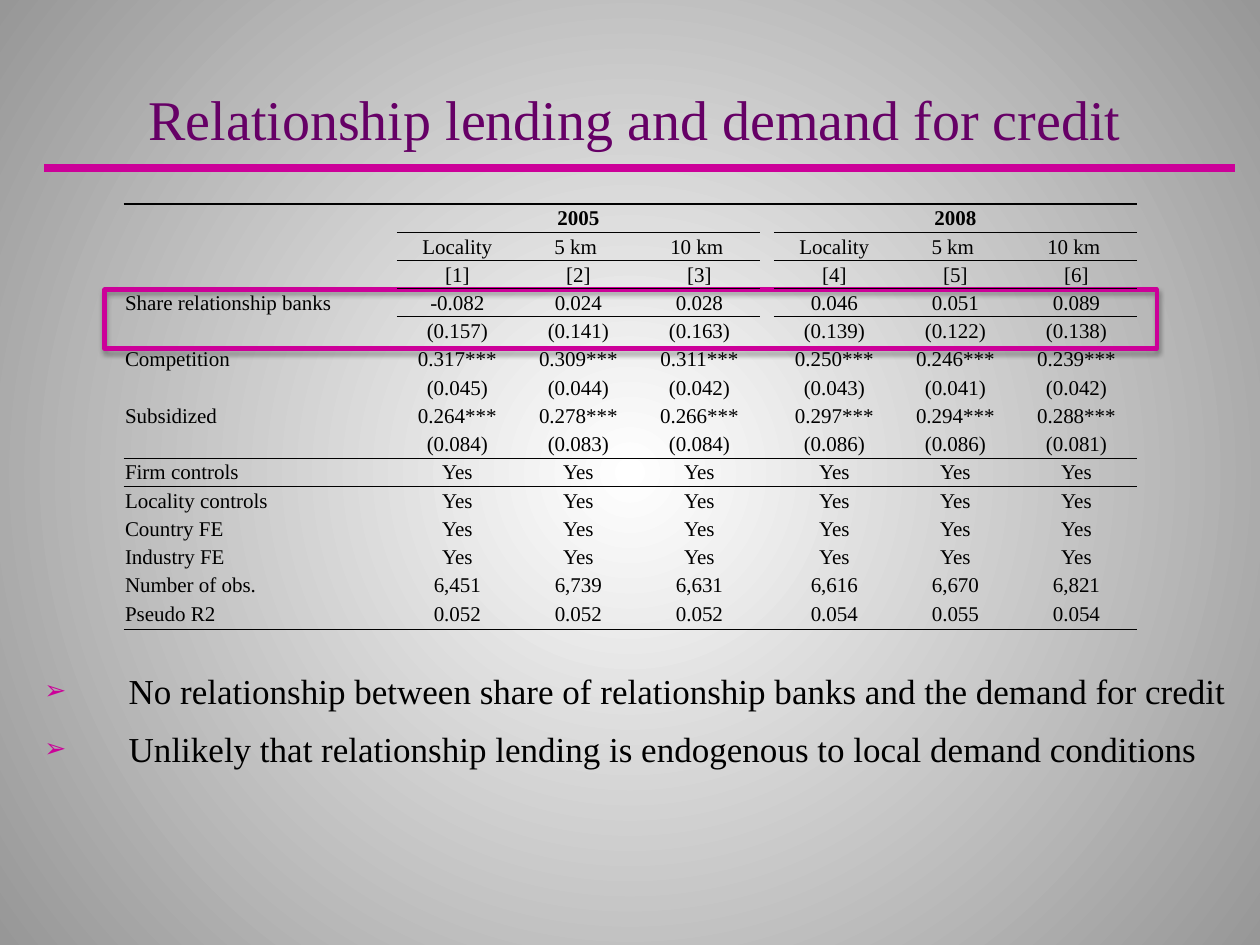
"""Build a slide with a table of lending results and two remarks."""
from typing import Any, NamedTuple

from pptx import Presentation
from pptx.dml.color import RGBColor
from pptx.enum.shapes import MSO_CONNECTOR, MSO_SHAPE
from pptx.enum.text import MSO_ANCHOR, MSO_AUTO_SIZE, PP_ALIGN
from pptx.oxml import parse_xml
from pptx.oxml.ns import nsdecls
from pptx.util import Cm, Pt

HUES = {"title": "660066", "accent": "CC0099", "text": "000000",
        "inner": "FFFFFF", "outer": "979797"}
FACE = "Times New Roman"
NS = nsdecls("a")


class Box(NamedTuple):
    left: float
    top: float
    width: float
    height: float


class Rule(NamedTuple):
    edge: int
    points: float
    cols: tuple


NAMES = Box(0.84, 0.64, 23.93, 2.54)
BODY = Box(0.64, 3.61, 24.46, 15.44)
FRAME = Box(2.11, 5.84, 21.21, 1.19)
GRID = Box(2.49, 4.11, 20.43, 8.59)

WIDTHS = [5.51] + [2.44] * 3 + [0.28] + [2.44] * 3
HEIGHTS = [0.57] * 14 + [0.61]
WHOLE = tuple(range(8))
DATA = (1, 2, 3, 5, 6, 7)
RULES = [Rule(0, 1, WHOLE), Rule(1, 0.5, DATA), Rule(2, 0.5, DATA),
         Rule(3, 0.5, DATA), Rule(9, 0.5, WHOLE), Rule(15, 1, WHOLE)]

YES = ["Yes"] * 6
ROWS = [
    ("", ["2005", "", "", "2008", "", ""]),
    ("", ["Locality", "5 km ", "10 km "] * 2),
    ("", [f"[{n}]" for n in range(1, 7)]),
    ("Share relationship banks", ["-0.082", "0.024", "0.028", "0.046", "0.051", "0.089"]),
    ("", ["(0.157)", "(0.141)", "(0.163)", "(0.139)", "(0.122)", "(0.138)"]),
    ("Competition", ["0.317***", "0.309***", "0.311***", "0.250***", "0.246***", "0.239***"]),
    ("", ["(0.045)", "(0.044)", "(0.042)", "(0.043)", "(0.041)", "(0.042)"]),
    ("Subsidized", ["0.264***", "0.278***", "0.266***", "0.297***", "0.294***", "0.288***"]),
    ("", ["(0.084)", "(0.083)", "(0.084)", "(0.086)", "(0.086)", "(0.081)"]),
    ("Firm controls", YES),
    ("Locality controls", YES),
    ("Country FE", YES),
    ("Industry FE", YES),
    ("Number of obs.", ["6,451", "6,739", "6,631", "6,616", "6,670", "6,821"]),
    ("Pseudo R2", ["0.052", "0.052", "0.052", "0.054", "0.055", "0.054"]),
]
POINTS = [
    "No relationship between share of relationship banks and the demand for credit",
    "Unlikely that relationship lending is endogenous to local demand conditions",
]


def style(item: Any, values: dict) -> None:
    """Set each named value on the item."""
    for name, value in values.items():
        setattr(item, name, value)


def place(shape: Any, box: Box) -> None:
    """Move a shape to its box."""
    style(shape, {name: Cm(value) for name, value in box._asdict().items()})


def write(para: Any, text: str, size: int, hue: str, bold: bool = False) -> None:
    """Add one styled run to a paragraph."""
    run = para.add_run()
    run.text = text
    style(run.font, {"name": FACE, "size": Pt(size), "bold": bold})
    run.font.color.rgb = RGBColor.from_string(HUES[hue])


def shade(slide: Any) -> None:
    """Give the slide a round grey gradient."""
    fill = slide.background.fill
    fill.gradient()
    for stop, place_at, hue in zip(fill.gradient_stops, (0, 1), ("inner", "outer")):
        stop.position = place_at
        stop.color.rgb = RGBColor.from_string(HUES[hue])
    grad = slide.element.xpath("//p:bg//a:gradFill")[0]
    for line in grad.xpath("a:lin"):
        grad.remove(line)
    grad.append(parse_xml(
        f'<a:path {NS} path="circle"><a:fillToRect l="50000" t="50000" '
        'r="50000" b="50000"/></a:path>'))


def head(slide: Any) -> None:
    """Fill the title and draw the bar below it."""
    title = slide.shapes.title
    place(title, NAMES)
    style(title.text_frame, {"vertical_anchor": MSO_ANCHOR.BOTTOM,
                             "auto_size": MSO_AUTO_SIZE.NONE})
    para = title.text_frame.paragraphs[0]
    para.alignment = PP_ALIGN.CENTER
    write(para, "Relationship lending and demand for credit", 32, "title")
    bar = slide.shapes.add_connector(
        MSO_CONNECTOR.STRAIGHT, Cm(0.89), Cm(3.38), Cm(24.89), Cm(3.38))
    bar.line.width = Pt(4.5)
    bar.line.color.rgb = RGBColor.from_string(HUES["accent"])
    bar.element.spPr.append(parse_xml(f"<a:effectLst {NS}/>"))


def remarks(slide: Any) -> None:
    """Fill the body with arrow bullets below the table."""
    body = slide.placeholders[1]
    place(body, BODY)
    frame = body.text_frame
    style(frame, {"auto_size": MSO_AUTO_SIZE.NONE, "margin_top": Cm(9.8)})
    for index, text in enumerate(POINTS):
        para = frame.add_paragraph() if index else frame.paragraphs[0]
        style(para, {"line_spacing": 1.1, "space_before": Pt(0.7), "space_after": Pt(6)})
        write(para, text, 20, "text")
        props = para._p.get_or_add_pPr()
        props.set("marL", str(Cm(1.7)))
        props.set("indent", str(-Cm(1.7)))
        for part in (f'<a:buClr {NS}><a:srgbClr val="{HUES["accent"]}"/></a:buClr>',
                     f'<a:buSzPct {NS} val="75000"/>',
                     f'<a:buChar {NS} char="➢"/>'):
            props.append(parse_xml(part))


def outline(slide: Any) -> None:
    """Frame the key rows with a shadowed box."""
    box = slide.shapes.add_shape(MSO_SHAPE.RECTANGLE, *map(Cm, FRAME))
    box.fill.background()
    box.line.width = Pt(2.5)
    box.line.color.rgb = RGBColor.from_string(HUES["accent"])
    box.shadow.inherit = False
    box.element.spPr.xpath("a:effectLst")[0].append(parse_xml(
        f'<a:outerShdw {NS} blurRad="{Pt(3.1)}" dist="{Pt(1.8)}" dir="5400000" '
        f'rotWithShape="0"><a:srgbClr val="{HUES["text"]}"><a:alpha val="35000"/>'
        '</a:srgbClr></a:outerShdw>'))


def fill_cell(cell: Any, text: str, left: bool, bold: bool) -> None:
    """Format one cell and write its text."""
    cell.fill.background()
    style(cell, {"vertical_anchor": MSO_ANCHOR.MIDDLE, "margin_left": Cm(0.03),
                 "margin_right": Cm(0.03), "margin_top": Cm(0.03), "margin_bottom": 0})
    para = cell.text_frame.paragraphs[0]
    para.alignment = PP_ALIGN.LEFT if left else PP_ALIGN.CENTER
    if text:
        write(para, text, 12, "text", bold)
    else:
        para._p.get_or_add_endParaRPr().set("sz", "1200")


def border(cell: Any, side: str, points: float) -> None:
    """Draw one side of a cell."""
    cell._tc.get_or_add_tcPr().xpath("a:noFill")[0].addprevious(parse_xml(
        f'<a:ln{side} {NS} w="{Pt(points)}"><a:solidFill>'
        f'<a:srgbClr val="{HUES["text"]}"/></a:solidFill></a:ln{side}>'))


def results(slide: Any) -> None:
    """Add the table of results with its rules."""
    table = slide.shapes.add_table(len(ROWS), len(WIDTHS), *map(Cm, GRID)).table
    style(table, {"first_row": False, "horz_banding": False})
    table._tbl.xpath("a:tblPr/a:tableStyleId")[0].text = \
        "{2D5ABB26-0587-4C30-8999-92F81FD0307C}"
    for col, width in zip(table.columns, WIDTHS):
        col.width = Cm(width)
    for index, (name, values) in enumerate(ROWS):
        table.rows[index].height = Cm(HEIGHTS[index])
        for col, text in enumerate([name, *values[:3], "", *values[3:]]):
            fill_cell(table.cell(index, col), text, col == 0, index == 0)
    for rule in RULES:
        for row, side in ((rule.edge - 1, "B"), (rule.edge, "T")):
            if 0 <= row < len(ROWS):
                for col in rule.cols:
                    border(table.cell(row, col), side, rule.points)
    for col in (1, 5):
        table.cell(0, col).merge(table.cell(0, col + 2))


def main() -> None:
    """Build and save the slide."""
    deck = Presentation()
    style(deck, {"slide_width": Cm(25.4), "slide_height": Cm(19.05)})
    slide = deck.slides.add_slide(deck.slide_layouts[1])
    for draw in (shade, head, remarks, outline, results):
        draw(slide)
    deck.save("out.pptx")


if __name__ == "__main__":
    main()
